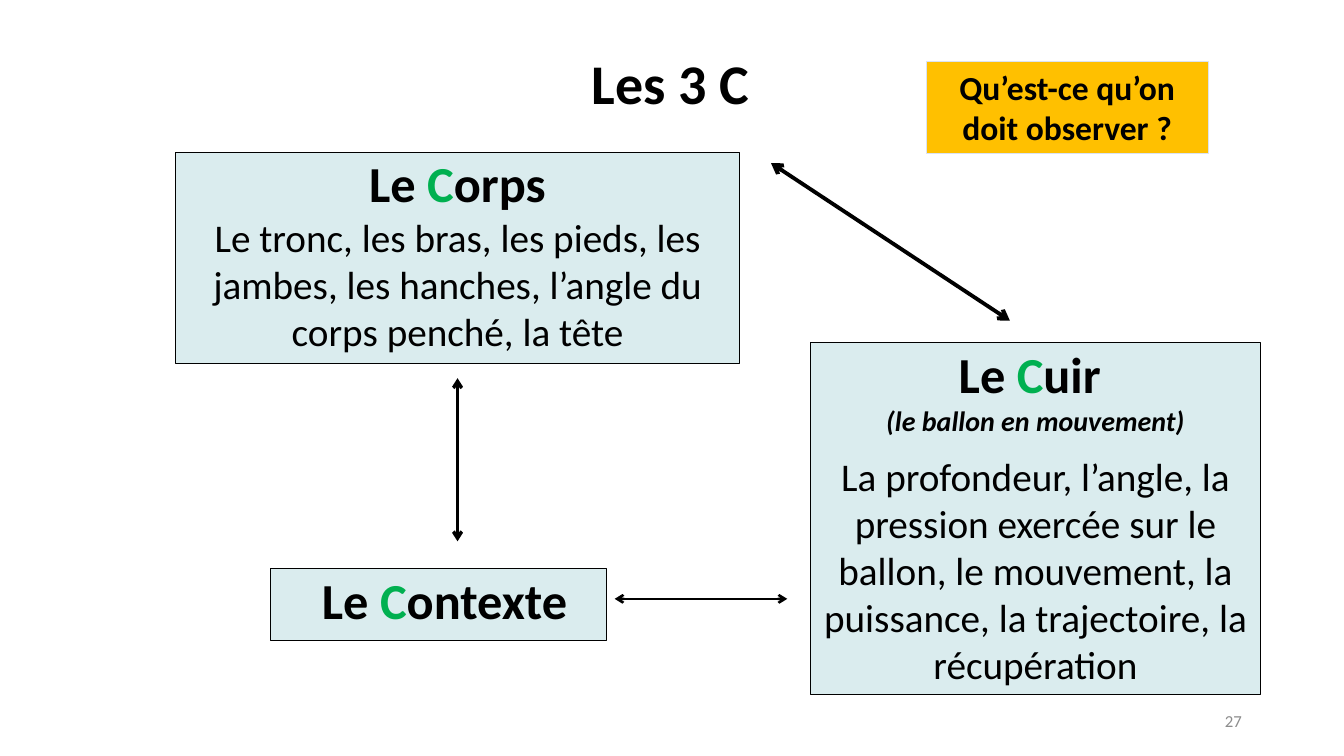
from dataclasses import dataclass

import pptx
import pptx.dml.color
import pptx.enum.shapes
import pptx.enum.text
import pptx.oxml
import pptx.oxml.ns
import pptx.util
from pptx.util import Cm

ALIGN = pptx.enum.text.PP_ALIGN
ANCHOR = pptx.enum.text.MSO_ANCHOR


@dataclass(frozen=True)
class Theme:
    font: str = "Calibri"
    ink: str = "000000"
    green: str = "00B050"
    pale: str = "DAECEE"
    gold: str = "FFC000"
    edge: str = "DAE3F3"
    gray: str = "8C8C8C"
    title: int = 40
    head: int = 36
    body: int = 28
    ask: int = 24
    note: int = 20
    page: int = 12


@dataclass(frozen=True)
class Area:
    left: float
    top: float
    width: float
    height: float

    def place(self) -> tuple:
        return Cm(self.left), Cm(self.top), Cm(self.width), Cm(self.height)


@dataclass(frozen=True)
class Card:
    area: Area
    start: str
    rest: str
    note: str = ""
    body: str = ""


@dataclass(frozen=True)
class Arrow:
    x1: float
    y1: float
    x2: float
    y2: float
    weight: float


THEME = Theme()

CARDS = [
    Card(Area(6.83, 14.33, 8.46, 1.8), " Le ", "ontexte"),
    Card(Area(20.42, 8.64, 11.35, 8.86), "Le ", "uir ",
         note="(le ballon en mouvement)",
         body="La profondeur, l’angle, la pression exercée sur le ballon, "
              "le mouvement, la puissance, la trajectoire, la récupération"),
    Card(Area(4.42, 3.84, 14.22, 5.31), "Le ", "orps",
         body="Le tronc, les bras, les pieds, les jambes, les hanches, "
              "l’angle du corps penché, la tête"),
]

ARROWS = [
    Arrow(11.53, 9.53, 11.53, 13.64, 2.25),
    Arrow(15.49, 15.09, 19.84, 15.09, 1.75),
    Arrow(19.43, 4.11, 25.45, 8.08, 2.75),
]


def tint(code: str):
    return pptx.dml.color.RGBColor.from_string(code)


def write(par, text: str, *, size: int, color: str = THEME.ink, bold: bool = False,
          slant: bool = False, align=ALIGN.CENTER, gap: float = 0) -> None:
    par.alignment = align
    par.space_before = pptx.util.Pt(gap)
    run = par.add_run()
    run.text = text
    run.font.name = THEME.font
    run.font.size = pptx.util.Pt(size)
    run.font.bold = bold
    run.font.italic = slant
    run.font.color.rgb = tint(color)


def frame(shape, anchor, pad: float | None = None):
    text = shape.text_frame
    text.word_wrap = True
    text.vertical_anchor = anchor
    if pad is not None:
        text.margin_left = text.margin_right = Cm(pad)
        text.margin_top = text.margin_bottom = Cm(pad)
    return text


def draw_box(slide, area: Area, fill: str, line: str, weight: float):
    box = slide.shapes.add_shape(pptx.enum.shapes.MSO_SHAPE.RECTANGLE, *area.place())
    box.shadow.inherit = False
    box.fill.solid()
    box.fill.fore_color.rgb = tint(fill)
    box.line.color.rgb = tint(line)
    box.line.width = pptx.util.Pt(weight)
    return box


def draw_card(slide, card: Card) -> None:
    box = draw_box(slide, card.area, THEME.pale, THEME.ink, 0.72)
    text = frame(box, ANCHOR.TOP, 0)
    head = text.paragraphs[0]
    for part, color in ((card.start, THEME.ink), ("C", THEME.green), (card.rest, THEME.ink)):
        write(head, part, size=THEME.head, color=color, bold=True)
    if card.note:
        write(text.add_paragraph(), card.note, size=THEME.note, bold=True, slant=True)
    if card.body:
        write(text.add_paragraph(), card.body, size=THEME.body, gap=11 if card.note else 0)


def draw_arrow(slide, arrow: Arrow) -> None:
    ends = [Cm(n) for n in (arrow.x1, arrow.y1, arrow.x2, arrow.y2)]
    link = slide.shapes.add_connector(pptx.enum.shapes.MSO_CONNECTOR.STRAIGHT, *ends)
    link.line.color.rgb = tint(THEME.ink)
    link.line.width = pptx.util.Pt(arrow.weight)
    line = link.line._get_or_add_ln()
    for tag in ("a:headEnd", "a:tailEnd"):
        tip = pptx.oxml.parse_xml(f'<{tag} {pptx.oxml.ns.nsdecls("a")} type="arrow"/>')
        line.append(tip)
    blank = pptx.oxml.parse_xml(f'<a:effectLst {pptx.oxml.ns.nsdecls("a")}/>')
    link._element.spPr.append(blank)


def main() -> None:
    deck = pptx.Presentation()
    deck.slide_width, deck.slide_height = Cm(33.87), Cm(19.05)
    slide = deck.slides.add_slide(deck.slide_layouts[6])

    for arrow in ARROWS:
        draw_arrow(slide, arrow)
    for card in CARDS:
        draw_card(slide, card)

    title = frame(slide.shapes.add_textbox(*Area(4.14, 1.02, 25.5, 2.74).place()), ANCHOR.MIDDLE)
    title.margin_bottom = Cm(0.75)
    write(title.paragraphs[0], "Les 3 C", size=THEME.title, bold=True)

    ask = draw_box(slide, Area(23.34, 1.55, 7.11, 2.31), THEME.gold, THEME.edge, 0.75)
    write(frame(ask, ANCHOR.MIDDLE).paragraphs[0], "Qu’est-ce qu’on doit observer ?",
          size=THEME.ask, bold=True)

    page = slide.shapes.add_textbox(*Area(23.93, 17.65, 7.62, 1.02).place())
    write(frame(page, ANCHOR.MIDDLE).paragraphs[0], "27",
          size=THEME.page, color=THEME.gray, align=ALIGN.RIGHT)

    deck.save("out.pptx")


if __name__ == "__main__":
    main()
